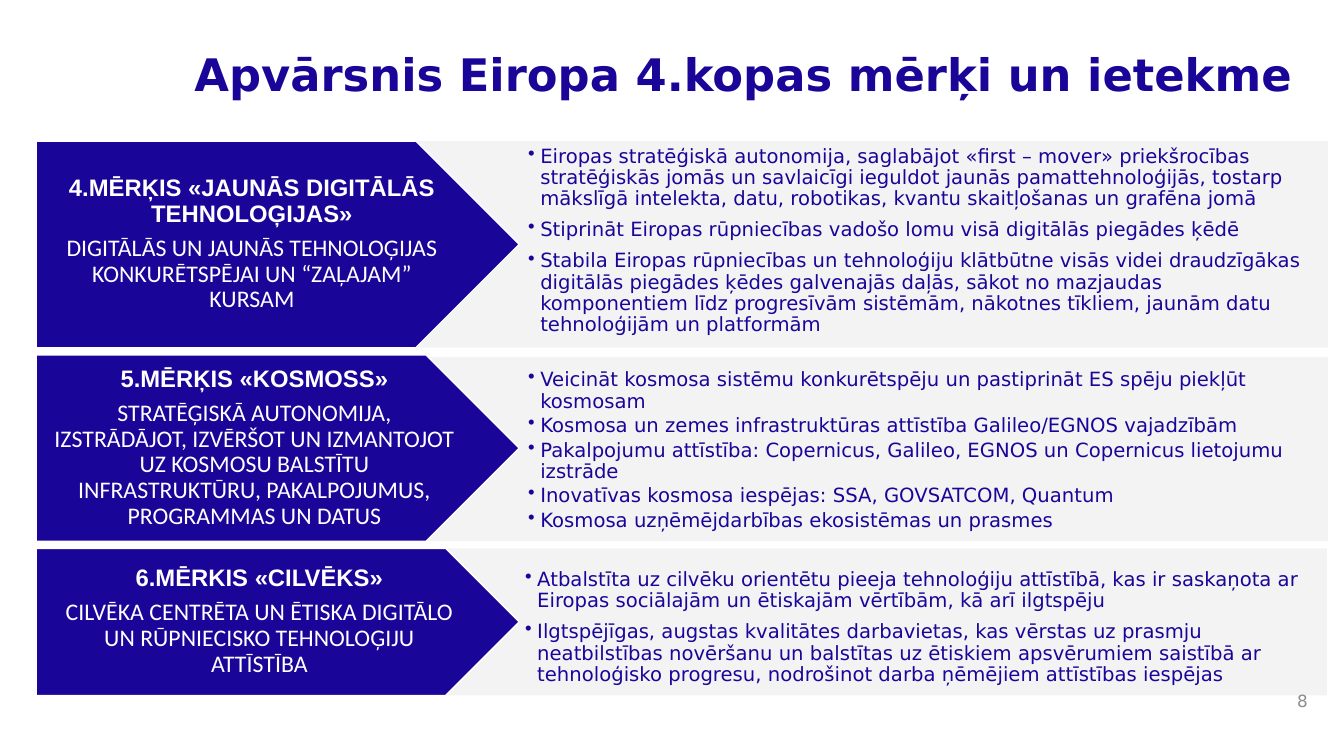
from pptx import Presentation
from pptx.dml.color import RGBColor
from pptx.enum.shapes import MSO_SHAPE
from pptx.enum.text import MSO_ANCHOR, PP_ALIGN
from pptx.oxml.ns import qn
from pptx.util import Inches, Pt
from lxml import etree

RECTANGLE, PENTAGON = MSO_SHAPE.RECTANGLE, MSO_SHAPE.PENTAGON
TOP, MIDDLE = MSO_ANCHOR.TOP, MSO_ANCHOR.MIDDLE
LEFT, CENTER, RIGHT = PP_ALIGN.LEFT, PP_ALIGN.CENTER, PP_ALIGN.RIGHT

THEME = {
    "navy": RGBColor(0x1A, 0x05, 0x99),
    "panel": RGBColor(0xF2, 0xF2, 0xF2),
    "white": RGBColor(0xFF, 0xFF, 0xFF),
    "gray": RGBColor(0x8C, 0x8C, 0x8C),
    "title": Pt(32),
    "goal": Pt(17),
    "bullet": Pt(14),
    "number": Pt(12),
    "body_font": "DejaVu Sans",
    "heading_font": "Arial",
    "summary_font": "Calibri",
}

GOALS = [
    {
        "panel": (3.42, 1.4, 9.75, 2.05),
        "arrow": (0.36, 1.4, 4.79, 2.05),
        "list": (5.14, 1.4, 8.02, 2.01),
        "gap": 7.2,
        "heading": "4.MĒRĶIS «JAUNĀS DIGITĀLĀS TEHNOLOĢIJAS»",
        "summary": "DIGITĀLĀS UN JAUNĀS TEHNOLOĢIJAS KONKURĒTSPĒJAI UN “ZAĻAJAM” KURSAM",
        "bullets": [
            "Eiropas stratēģiskā autonomija, saglabājot «first – mover» priekšrocības "
            "stratēģiskās jomās un savlaicīgi ieguldot jaunās pamattehnoloģijās, tostarp "
            "mākslīgā intelekta, datu, robotikas, kvantu skaitļošanas un grafēna jomā",
            "Stiprināt Eiropas rūpniecības vadošo lomu visā digitālās piegādes ķēdē",
            "Stabila Eiropas rūpniecības un tehnoloģiju klātbūtne visās videi draudzīgākas "
            "digitālās piegādes ķēdes galvenajās daļās, sākot no mazjaudas komponentiem "
            "līdz progresīvām sistēmām, nākotnes tīkliem, jaunām datu tehnoloģijām un platformām",
        ],
    },
    {
        "panel": (3.42, 3.54, 9.75, 1.83),
        "arrow": (0.36, 3.52, 4.79, 1.85),
        "list": (5.14, 3.62, 8.02, 1.71),
        "gap": 2.4,
        "heading": "5.MĒRĶIS «KOSMOSS»",
        "summary": "STRATĒĢISKĀ AUTONOMIJA, IZSTRĀDĀJOT, IZVĒRŠOT UN IZMANTOJOT UZ KOSMOSU "
                   "BALSTĪTU INFRASTRUKTŪRU, PAKALPOJUMUS, PROGRAMMAS UN DATUS",
        "bullets": [
            "Veicināt kosmosa sistēmu konkurētspēju un pastiprināt ES spēju piekļūt kosmosam",
            "Kosmosa un zemes infrastruktūras attīstība Galileo/EGNOS vajadzībām",
            "Pakalpojumu attīstība: Copernicus, Galileo, EGNOS un Copernicus lietojumu izstrāde",
            "Inovatīvas kosmosa iespējas: SSA, GOVSATCOM, Quantum",
            "Kosmosa uzņēmējdarbības ekosistēmas un prasmes",
        ],
    },
    {
        "panel": (3.65, 5.44, 9.51, 1.46),
        "arrow": (0.36, 5.44, 4.79, 1.46),
        "list": (5.11, 5.6, 8.09, 1.3),
        "gap": 7.2,
        "heading": "6.MĒRKIS «CILVĒKS»",
        "summary": "CILVĒKA CENTRĒTA UN ĒTISKA DIGITĀLO UN RŪPNIECISKO TEHNOLOĢIJU ATTĪSTĪBA",
        "bullets": [
            "Atbalstīta uz cilvēku orientētu pieeja tehnoloģiju attīstībā, kas ir saskaņota ar "
            "Eiropas sociālajām un ētiskajām vērtībām, kā arī ilgtspēju",
            "Ilgtspējīgas, augstas kvalitātes darbavietas, kas vērstas uz prasmju neatbilstības "
            "novēršanu un balstītas uz ētiskiem apsvērumiem saistībā ar tehnoloģisko progresu, "
            "nodrošinot darba ņēmējiem attīstības iespējas",
        ],
    },
]


def add_box(page, place, kind=None, fill=None, anchor=TOP):
    area = [Inches(value) for value in place]
    if kind is None:
        box = page.shapes.add_textbox(*area)
    else:
        box = page.shapes.add_shape(kind, *area)
        box.shadow.inherit = False
        box.fill.solid()
        box.fill.fore_color.rgb = fill
        box.line.fill.background()
    box.text_frame.word_wrap = True
    box.text_frame.vertical_anchor = anchor
    return box


def write(box, texts, color, paragraph_format, font_formats, bullet=False):
    for index, text in enumerate(texts):
        frame = box.text_frame
        para = frame.add_paragraph() if index else frame.paragraphs[0]
        for name, value in paragraph_format.items():
            setattr(para, name, value)
        if bullet:
            properties = para._p.get_or_add_pPr()
            properties.set("marL", str(Inches(0.12)))
            properties.set("indent", str(Inches(-0.12)))
            etree.SubElement(properties, qn("a:buChar")).set("char", "•")
        span = para.add_run()
        span.text = text
        span.font.color.rgb = color
        for name, value in font_formats[index % len(font_formats)].items():
            setattr(span.font, name, value)


deck = Presentation()
deck.slide_width, deck.slide_height = Inches(13.33), Inches(7.5)
page = deck.slides.add_slide(deck.slide_layouts[6])

goal_fonts = [
    {"name": THEME["heading_font"], "size": THEME["goal"], "bold": True},
    {"name": THEME["summary_font"], "size": THEME["goal"], "bold": False},
]
bullet_fonts = [{"name": THEME["body_font"], "size": THEME["bullet"]}]
arrow_margins = {
    "margin_left": Inches(0.17), "margin_right": Inches(0.17),
    "margin_top": Inches(0.13), "margin_bottom": Inches(0.13),
}

for goal in GOALS:
    panel = add_box(page, goal["panel"], RECTANGLE, THEME["panel"])
    panel_color = panel.fill._xPr.find(qn("a:solidFill"))[0]
    etree.SubElement(panel_color, qn("a:alpha")).set("val", "90000")

    arrow = add_box(page, goal["arrow"], PENTAGON, THEME["navy"], MIDDLE)
    arrow.line.color.rgb = THEME["white"]
    arrow.line.width = Pt(1)
    for name, value in arrow_margins.items():
        setattr(arrow.text_frame, name, value)
    goal_format = {"alignment": CENTER, "line_spacing": 0.9, "space_after": Pt(6)}
    write(arrow, [goal["heading"], goal["summary"]], THEME["white"], goal_format, goal_fonts)

    bullets = add_box(page, goal["list"])
    bullet_format = {"alignment": LEFT, "line_spacing": 0.9, "space_after": Pt(goal["gap"])}
    write(bullets, goal["bullets"], THEME["navy"], bullet_format, bullet_fonts, bullet=True)

title = add_box(page, (1.83, 0.47, 11.5, 0.93))
title_fonts = [{"name": THEME["body_font"], "size": THEME["title"], "bold": True}]
write(title, ["Apvārsnis Eiropa 4.kopas mērķi un ietekme"], THEME["navy"],
      {"line_spacing": 0.9}, title_fonts)

number = add_box(page, (10.07, 6.75, 3, 0.4), anchor=MIDDLE)
number_fonts = [{"name": THEME["body_font"], "size": THEME["number"]}]
write(number, ["8"], THEME["gray"], {"alignment": RIGHT}, number_fonts)

deck.save("out.pptx")
